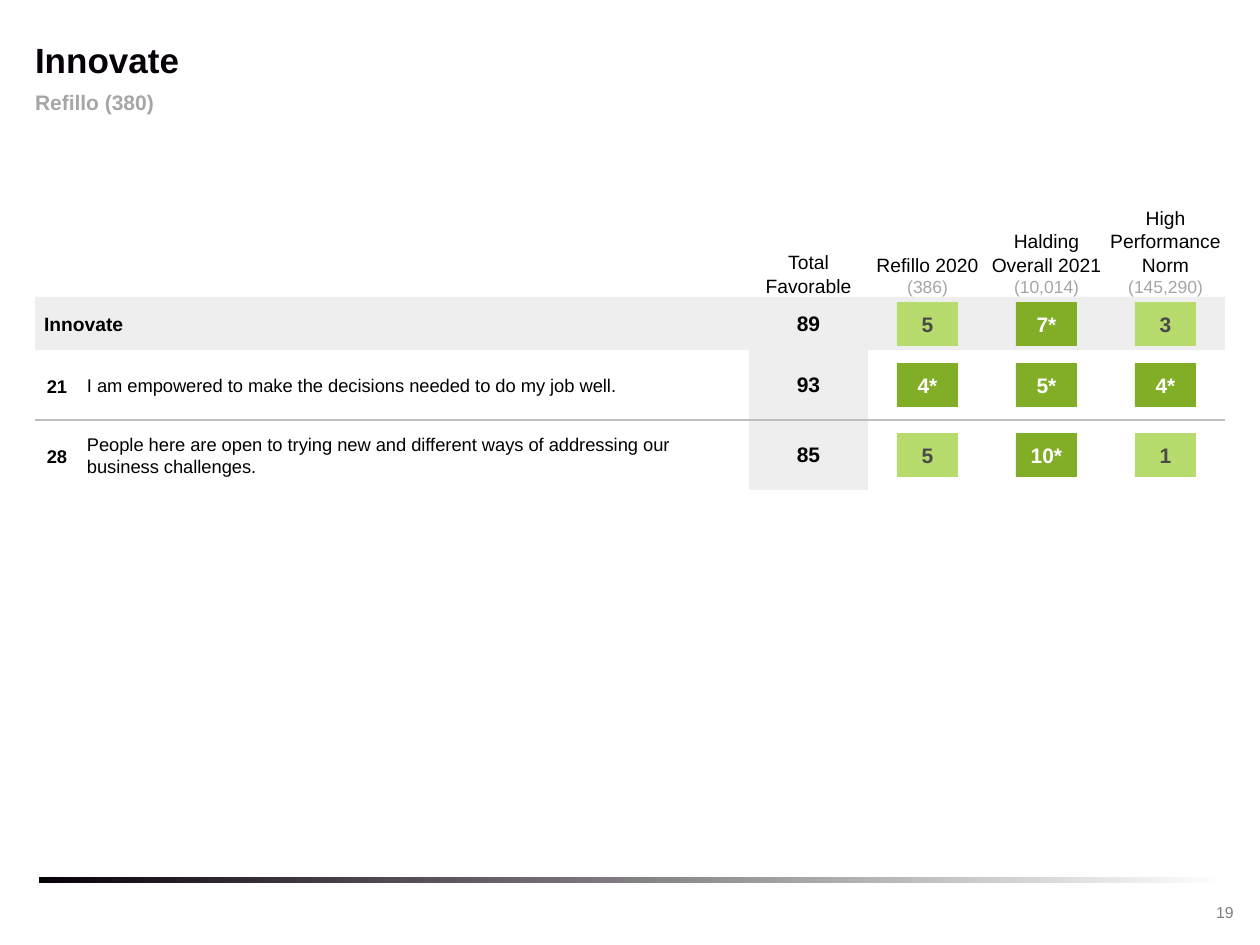
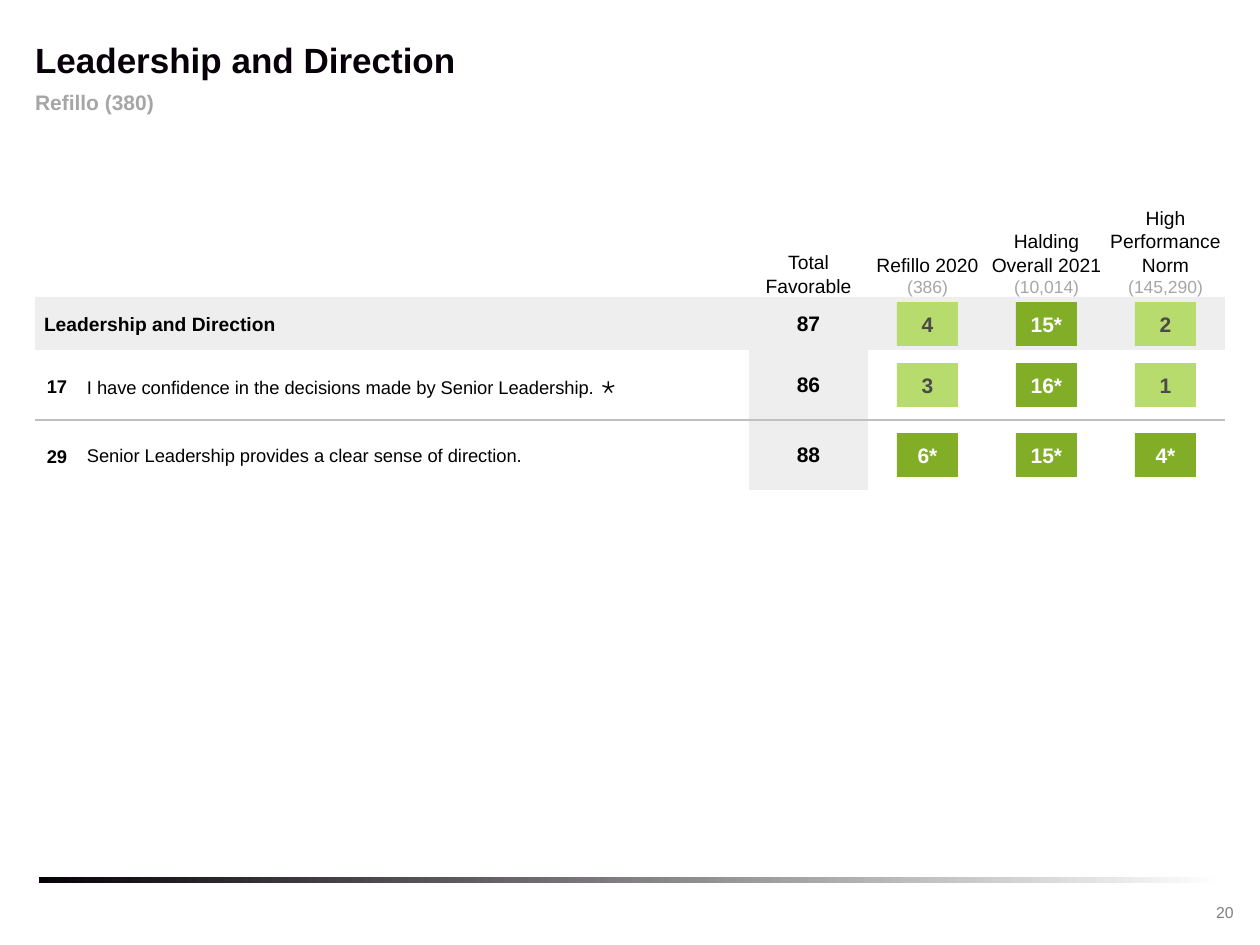
from lxml import etree
from pptx import Presentation
from pptx.dml.color import RGBColor
from pptx.enum.shapes import MSO_CONNECTOR, MSO_SHAPE
from pptx.enum.text import MSO_ANCHOR, PP_ALIGN
from pptx.oxml.ns import qn
from pptx.util import Emu, Pt

RECTANGLE = MSO_SHAPE.RECTANGLE
STRAIGHT = MSO_CONNECTOR.STRAIGHT
TOP, MIDDLE, BOTTOM = MSO_ANCHOR.TOP, MSO_ANCHOR.MIDDLE, MSO_ANCHOR.BOTTOM
LEFT, CENTER = PP_ALIGN.LEFT, PP_ALIGN.CENTER

BLACK = RGBColor(0x00, 0x00, 0x00)
WHITE = RGBColor(0xFF, 0xFF, 0xFF)
INK = RGBColor(0x08, 0x00, 0x09)
MUTED = RGBColor(0xA6, 0xA6, 0xA6)
PAGE_GRAY = RGBColor(0x7F, 0x7F, 0x7F)
BAND_GRAY = RGBColor(0xEE, 0xEE, 0xEE)
RULE_GRAY = RGBColor(0xBF, 0xBF, 0xBF)
CHIP_TEXT = RGBColor(0x4A, 0x4A, 0x4A)
LIGHT_GREEN = RGBColor(0xB7, 0xDB, 0x6C)
DARK_GREEN = RGBColor(0x81, 0xAD, 0x27)

FONT = "Arial"
PX_PER_INCH = 126
MARGIN = 35
CONTENT_WIDTH = 1190
COLUMN_WIDTH = 119
LABEL_WIDTH = 714
COLUMNS = [MARGIN + LABEL_WIDTH + COLUMN_WIDTH * index for index in range(4)]
BAND_TOP, BAND_HEIGHT = 297, 53
ROWS_TOP, ROW_HEIGHT = BAND_TOP + BAND_HEIGHT, 70
CHIP_WIDTH, CHIP_HEIGHT = 61, 44
TOTAL_HEIGHT = 25

SUBTITLE = "Refillo (380)"
BENCHMARKS = [
    ("Refillo 2020", "(386)"),
    ("Halding Overall 2021", "(10,014)"),
    ("High Performance Norm", "(145,290)"),
]
PAGES = [
    (19, "Innovate", "89", ["5", "7*", "3"], [
        ("21", "I am empowered to make the decisions needed to do my job well.", False,
         "93", ["4*", "5*", "4*"]),
        ("28", "People here are open to trying new and different ways of addressing "
               "our business challenges.", False, "85", ["5", "10*", "1"]),
    ]),
    (20, "Leadership and Direction", "87", ["4", "15*", "2"], [
        ("17", "I have confidence in the decisions made by Senior Leadership.", True,
         "86", ["3", "16*", "1"]),
        ("29", "Senior Leadership provides a clear sense of direction.", False,
         "88", ["6*", "15*", "4*"]),
    ]),
]


def px(length):
    return Emu(round(length * 914400 / PX_PER_INCH))


def box(left, top, width, height):
    return px(left), px(top), px(width), px(height)


def set_margins(text_frame, left, top, right, bottom):
    text_frame.margin_left = px(left)
    text_frame.margin_top = px(top)
    text_frame.margin_right = px(right)
    text_frame.margin_bottom = px(bottom)


def style_run(run, size, color, bold=False):
    run.font.name = FONT
    run.font.size = Pt(size)
    run.font.color.rgb = color
    run.font.bold = bold


def add_text(slide, area, text, size, color=BLACK, bold=False, align=LEFT,
             anchor=MIDDLE, margins=(0, 0, 0, 0)):
    text_frame = slide.shapes.add_textbox(*box(*area)).text_frame
    text_frame.word_wrap = True
    text_frame.vertical_anchor = anchor
    set_margins(text_frame, *margins)
    text_frame.text = text
    for paragraph in text_frame.paragraphs:
        paragraph.alignment = align
        style_run(paragraph.runs[0], size, color, bold)
    return text_frame


def add_rectangle(slide, area, color=None):
    shape = slide.shapes.add_shape(RECTANGLE, *box(*area))
    shape.shadow.inherit = False
    shape.line.fill.background()
    if color is not None:
        shape.fill.solid()
        shape.fill.fore_color.rgb = color
    return shape


def add_separator(slide, y):
    line = slide.shapes.add_connector(
        STRAIGHT, px(MARGIN), px(y), px(MARGIN + CONTENT_WIDTH), px(y))
    line.line.color.rgb = RULE_GRAY
    line.line.width = Pt(0.75)
    etree.SubElement(line.element.spPr, qn("a:effectLst"))


def add_frame(slide, title, page_number):
    bar = add_rectangle(slide, (39, 877, 1187, 6))
    bar.fill.gradient()
    bar.fill.gradient_angle = 0
    for stop, color in zip(bar.fill.gradient_stops, (INK, WHITE)):
        stop.color.rgb = color
    add_text(slide, (1192, 897, 66, 32), str(page_number), 9, PAGE_GRAY,
             align=CENTER, anchor=TOP, margins=(13, 6, 13, 6))
    add_text(slide, (MARGIN, 35, CONTENT_WIDTH, 48), title, 20, INK, bold=True)
    add_text(slide, (MARGIN, 89, CONTENT_WIDTH, 27), SUBTITLE, 12, MUTED, bold=True)


def add_headers(slide):
    add_text(slide, (COLUMNS[0], BAND_TOP - 140, COLUMN_WIDTH, 140), "Total Favorable",
             11, align=CENTER, anchor=BOTTOM)
    for left, (name, count) in zip(COLUMNS[1:], BENCHMARKS):
        text_frame = add_text(slide, (left, BAND_TOP - 175, COLUMN_WIDTH, 175),
                              f"{name}\n{count}", 11, align=CENTER, anchor=BOTTOM)
        style_run(text_frame.paragraphs[1].runs[0], 10, MUTED)


def add_chip(slide, left, top, value):
    significant = value.endswith("*")
    shape = add_rectangle(slide, (left, top, CHIP_WIDTH, CHIP_HEIGHT),
                          DARK_GREEN if significant else LIGHT_GREEN)
    text_frame = shape.text_frame
    text_frame.word_wrap = False
    text_frame.vertical_anchor = MIDDLE
    set_margins(text_frame, 0, 6, 0, 6)
    text_frame.text = value
    paragraph = text_frame.paragraphs[0]
    paragraph.alignment = CENTER
    style_run(paragraph.runs[0], 12, WHITE if significant else CHIP_TEXT, True)


def add_scores(slide, top, height, total, differences):
    add_text(slide, (COLUMNS[0], top + (height - TOTAL_HEIGHT) // 2, COLUMN_WIDTH, TOTAL_HEIGHT),
             total, 12, bold=True, align=CENTER)
    chip_top = top + (height - CHIP_HEIGHT + 1) // 2
    for left, value in zip(COLUMNS[1:], differences):
        add_chip(slide, left + (COLUMN_WIDTH - CHIP_WIDTH) // 2, chip_top, value)


def add_category(slide, name, total, differences):
    add_rectangle(slide, (MARGIN, BAND_TOP, LABEL_WIDTH, BAND_HEIGHT), BAND_GRAY)
    for left in COLUMNS:
        add_rectangle(slide, (left, BAND_TOP, COLUMN_WIDTH, BAND_HEIGHT), BAND_GRAY)
    add_text(slide, (MARGIN, BAND_TOP, LABEL_WIDTH, BAND_HEIGHT), name, 11,
             bold=True, margins=(9, 0, 9, 0))
    add_scores(slide, BAND_TOP, BAND_HEIGHT, total, differences)


def add_question(slide, top, number, statement, starred, total, differences):
    add_text(slide, (MARGIN, top + 22, 44, 29), number, 10.5, bold=True, align=CENTER)
    text_frame = add_text(slide, (78, top + 6, 643, 58), statement, 10.5,
                          margins=(9, 0, 44, 0))
    if starred:
        star = text_frame.paragraphs[0].add_run()
        star.text = " ⋆"
        style_run(star, 14, BLACK)
    add_scores(slide, top, ROW_HEIGHT, total, differences)


def add_page(presentation, page_number, title, total, differences, questions):
    slide = presentation.slides.add_slide(presentation.slide_layouts[6])
    add_frame(slide, title, page_number)
    add_headers(slide)
    add_category(slide, title, total, differences)
    row_tops = [ROWS_TOP + ROW_HEIGHT * index for index in range(len(questions))]
    for top in row_tops:
        add_rectangle(slide, (COLUMNS[0], top, COLUMN_WIDTH, ROW_HEIGHT), BAND_GRAY)
    for top in row_tops[1:]:
        add_separator(slide, top)
    for top, question in zip(row_tops, questions):
        add_question(slide, top, *question)


def main():
    presentation = Presentation()
    presentation.slide_width = px(1260)
    presentation.slide_height = px(945)
    for page in PAGES:
        add_page(presentation, *page)
    presentation.save("out.pptx")


if __name__ == "__main__":
    main()
